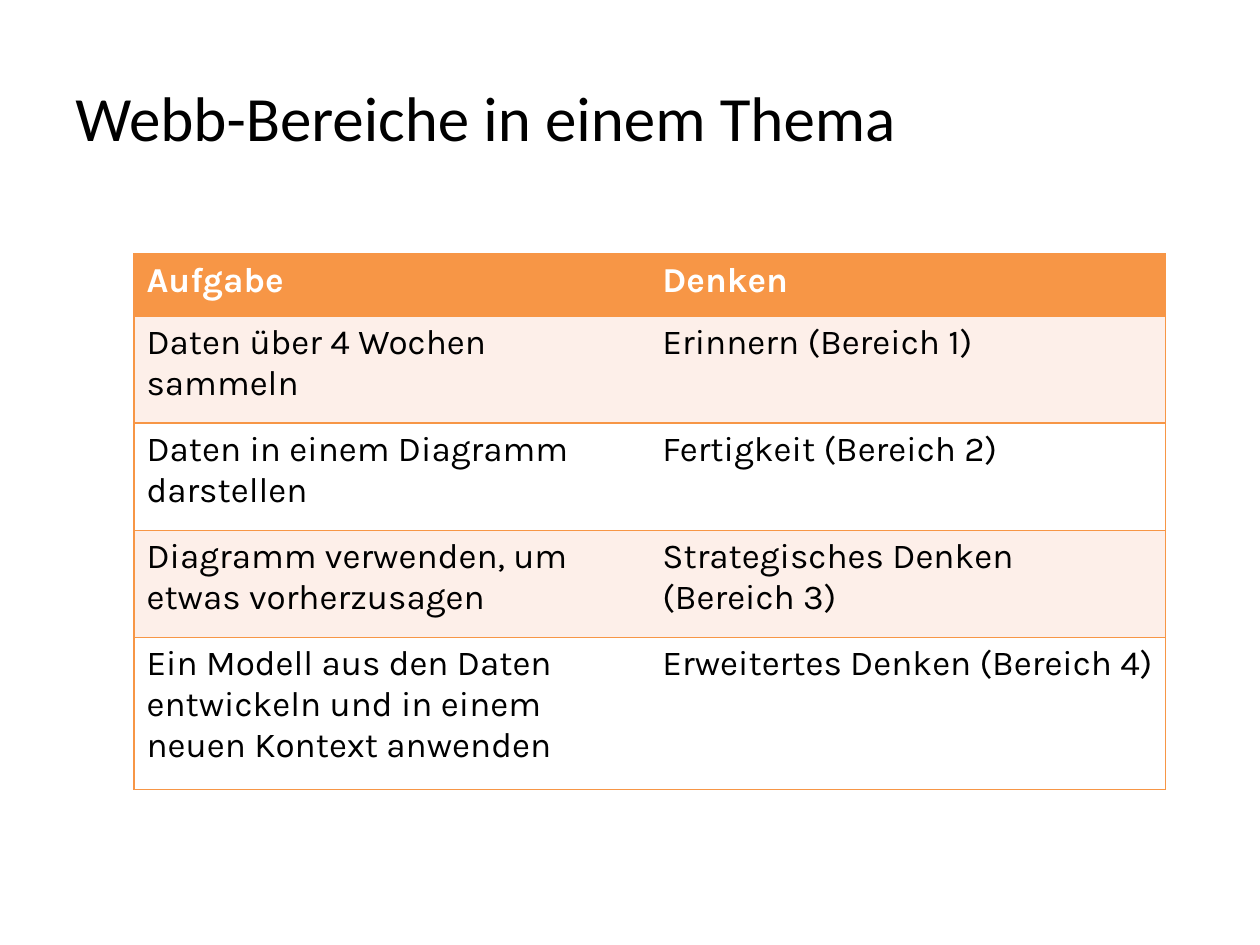
from lxml import etree
from pptx import Presentation
from pptx.dml.color import RGBColor
from pptx.enum.text import MSO_ANCHOR
from pptx.oxml.ns import qn
from pptx.util import Cm, Pt

COLORS = {
    "text": "000000",
    "header_text": "FFFFFF",
    "accent": "F79646",
    "band": "FDEFE9",
    "plain": "FFFFFF",
}
ROWS = [
    ("Aufgabe", "Denken"),
    ("Daten über 4 Wochen sammeln", "Erinnern (Bereich 1)"),
    ("Daten in einem Diagramm darstellen", "Fertigkeit (Bereich 2)"),
    ("Diagramm verwenden, um etwas vorherzusagen", "Strategisches Denken (Bereich 3)"),
    ("Ein Modell aus den Daten entwickeln und in einem neuen Kontext anwenden",
     "Erweitertes Denken (Bereich 4)"),
]
ROW_HEIGHTS = [1.25, 2.16, 2.16, 2.16, 3.07]
COLUMN_WIDTH = 10.4


def rgb(name):
    return RGBColor.from_string(COLORS[name])


class SlideBuilder:
    def __init__(self, slide):
        self.slide = slide
        self.title_font = "Calibri"
        self.table_font = "Karla"

    def format_text(self, frame, font_name, size, color, bold=False):
        for para in frame.paragraphs:
            for span in para.runs:
                span.font.name = font_name
                span.font.size = Pt(size)
                span.font.bold = bold
                span.font.color.rgb = rgb(color)

    def add_title(self, text, left, top, width, height):
        box = self.slide.shapes.add_textbox(Cm(left), Cm(top), Cm(width), Cm(height))
        frame = box.text_frame
        frame.word_wrap = True
        frame.vertical_anchor = MSO_ANCHOR.MIDDLE
        frame.text = text
        self.format_text(frame, self.title_font, 36, "text")

    def set_borders(self, cell, visible_sides):
        """Draw the named sides (L, R, T, B) in the accent colour and hide the others."""
        properties = cell._tc.get_or_add_tcPr()
        for position, side in enumerate("LRTB"):
            line = etree.Element(qn(f"a:ln{side}"), w=str(Pt(1)))
            if side in visible_sides:
                fill = etree.SubElement(line, qn("a:solidFill"))
                etree.SubElement(fill, qn("a:srgbClr"), val=COLORS["accent"])
            else:
                etree.SubElement(line, qn("a:noFill"))
            properties.insert(position, line)

    def add_table(self, rows, left, top, column_width, row_heights):
        columns = len(rows[0])
        table = self.slide.shapes.add_table(
            len(rows), columns, Cm(left), Cm(top),
            Cm(column_width * columns), Cm(sum(row_heights))).table
        for column in table.columns:
            column.width = Cm(column_width)
        for row_index, texts in enumerate(rows):
            table.rows[row_index].height = Cm(row_heights[row_index])
            header = row_index == 0
            fill = "accent" if header else ("band" if row_index % 2 else "plain")
            for column_index, text in enumerate(texts):
                cell = table.cell(row_index, column_index)
                cell.text_frame.text = text
                self.format_text(cell.text_frame, self.table_font, 20,
                                 "header_text" if header else "text", bold=header)
                cell.fill.solid()
                cell.fill.fore_color.rgb = rgb(fill)
                outer_side = {0: "L", columns - 1: "R"}.get(column_index, "")
                self.set_borders(cell, "TB" + outer_side)


def main():
    deck = Presentation()
    deck.slide_width, deck.slide_height = Cm(25.4), Cm(19.05)
    page = SlideBuilder(deck.slides.add_slide(deck.slide_layouts[6]))
    page.add_title("Webb-Bereiche in einem Thema", 1.27, 0.76, 18.24, 3.18)
    page.add_table(ROWS, 2.7, 5.12, COLUMN_WIDTH, ROW_HEIGHTS)
    deck.save("out.pptx")


if __name__ == "__main__":
    main()
